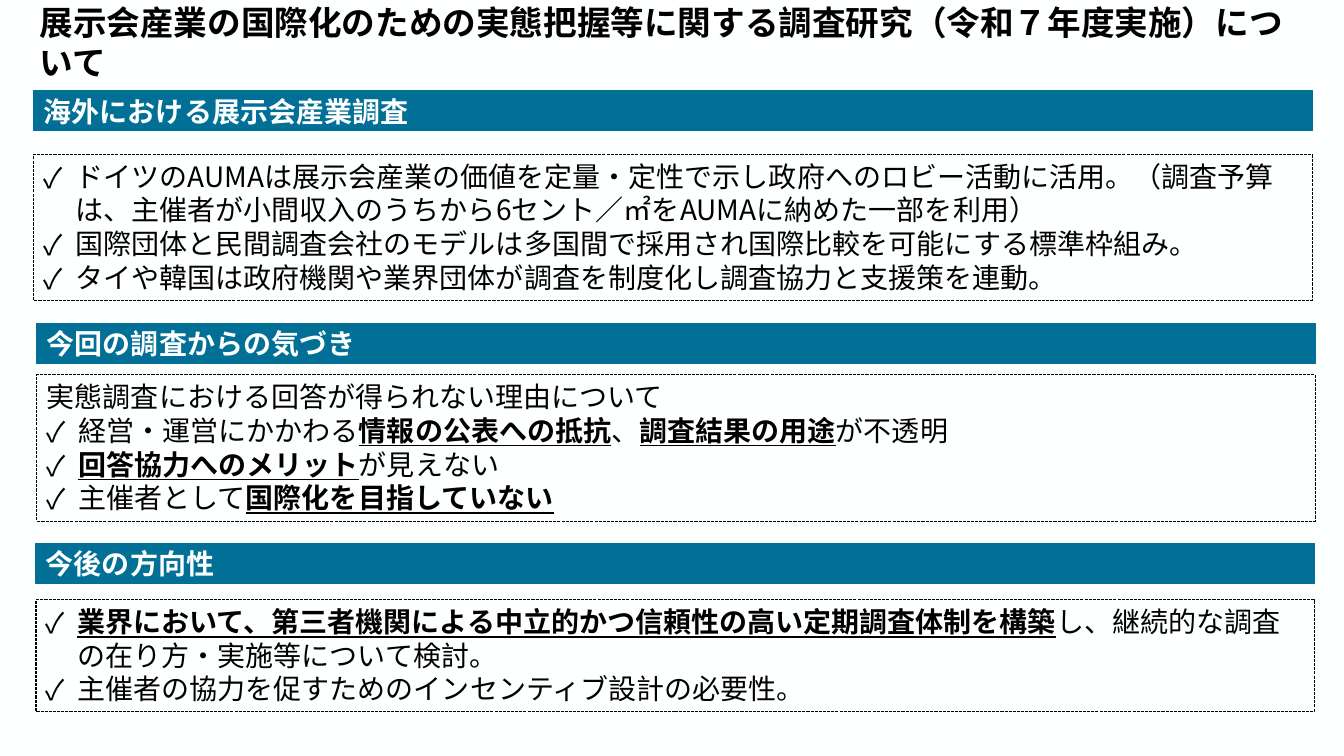
from lxml.etree import SubElement
from pptx import Presentation
from pptx.dml.color import RGBColor
from pptx.enum.dml import MSO_LINE
from pptx.enum.shapes import MSO_SHAPE
from pptx.enum.text import MSO_ANCHOR, MSO_AUTO_SIZE, PP_ALIGN
from pptx.oxml.ns import qn
from pptx.util import Pt

BLACK = RGBColor(0x00, 0x00, 0x00)
WHITE = RGBColor(0xFE, 0xFF, 0xFF)
TEAL = RGBColor(0x01, 0x6F, 0x96)
GOTHIC = "Noto Sans CJK JP"
LATIN = "Calibri"
WIDTH = 913
BAR_HEIGHT = 28.8
INDENT = 22.5

TITLE = "展示会産業の国際化のための実態把握等に関する調査研究（令和７年度実施）について"
OVERSEAS = [
    ["ドイツのAUMAは展示会産業の価値を定量・定性で示し政府へのロビー活動に活用。"
     "（調査予算は、主催者が小間収入のうちから6セント／㎡をAUMAに納めた一部を利用）"],
    ["国際団体と民間調査会社のモデルは多国間で採用され国際比較を可能にする標準枠組み。"],
    ["タイや韓国は政府機関や業界団体が調査を制度化し調査協力と支援策を連動。"],
]
FINDINGS_LEAD = "実態調査における回答が得られない理由について"
FINDINGS = [
    ["経営・運営にかかわる", ("情報の公表への抵抗",), "、", ("調査結果の用途",), "が不透明"],
    [("回答協力へのメリット",), "が見えない"],
    ["主催者として", ("国際化を目指していない",)],
]
DIRECTIONS = [
    [("業界において、第三者機関による中立的かつ信頼性の高い定期調査体制を構築",),
     "し、継続的な調査の在り方・実施等について検討。"],
    ["主催者の協力を促すためのインセンティブ設計の必要性。"],
]


def add_text(paragraph, text, size=20, font=GOTHIC, color=BLACK, bold=False, underline=False):
    """Append a formatted run to the paragraph."""
    run = paragraph.add_run()
    run.text = text
    run.font.size = Pt(size)
    run.font.bold = bold
    run.font.underline = underline
    run.font.color.rgb = color
    run.font.name = font
    east_asian = SubElement(run._r.get_or_add_rPr(), qn("a:ea"))
    east_asian.set("typeface", GOTHIC)


def add_check_mark(paragraph):
    """Give the paragraph a hanging check mark bullet."""
    properties = paragraph._p.get_or_add_pPr()
    properties.set("marL", str(Pt(INDENT)))
    properties.set("indent", str(-Pt(INDENT)))
    SubElement(properties, qn("a:buFont")).set("typeface", GOTHIC)
    SubElement(properties, qn("a:buChar")).set("char", "✓")


def add_box(slide, left, top, height, anchor):
    """Add a plain rectangle with left-aligned wrapping text."""
    shape = slide.shapes.add_shape(
        MSO_SHAPE.RECTANGLE, Pt(left), Pt(top), Pt(WIDTH), Pt(height))
    shape.shadow.inherit = False
    shape.line.width = Pt(0.75)
    shape.text_frame.word_wrap = True
    shape.text_frame.vertical_anchor = anchor
    shape.text_frame.paragraphs[0].alignment = PP_ALIGN.LEFT
    return shape


def add_title(slide, left, top, height):
    """Place the slide title in its placeholder."""
    title = slide.shapes.title
    title.left, title.top, title.width, title.height = Pt(left), Pt(top), Pt(WIDTH), Pt(height)
    frame = title.text_frame
    frame.word_wrap = True
    frame.auto_size = MSO_AUTO_SIZE.NONE
    frame.vertical_anchor = MSO_ANCHOR.MIDDLE
    frame.paragraphs[0].alignment = PP_ALIGN.LEFT
    add_text(frame.paragraphs[0], TITLE, size=24, bold=True)


def add_section(slide, left, top, heading, items, gap, height, lead=None, font=GOTHIC):
    """Add a heading bar and, below it, a dashed box of checked items."""
    bar = add_box(slide, left, top, BAR_HEIGHT, MSO_ANCHOR.MIDDLE)
    bar.fill.solid()
    bar.fill.fore_color.rgb = TEAL
    bar.line.color.rgb = TEAL
    add_text(bar.text_frame.paragraphs[0], heading, color=WHITE, bold=True)

    box = add_box(slide, left, top + BAR_HEIGHT + gap, height, MSO_ANCHOR.TOP)
    box.fill.background()
    box.line.color.rgb = BLACK
    box.line.dash_style = MSO_LINE.SQUARE_DOT
    frame = box.text_frame
    rows = ([[lead]] if lead else []) + items
    for index, parts in enumerate(rows):
        paragraph = frame.add_paragraph() if index else frame.paragraphs[0]
        paragraph.alignment = PP_ALIGN.LEFT
        if parts != [lead]:
            add_check_mark(paragraph)
        for part in parts:
            stressed = isinstance(part, tuple)
            add_text(paragraph, part[0] if stressed else part,
                     font=font, bold=stressed, underline=stressed)


def main():
    """Build and save the survey slide."""
    presentation = Presentation()
    presentation.slide_width, presentation.slide_height = Pt(960), Pt(540)
    slide = presentation.slides.add_slide(presentation.slide_layouts[5])
    slide.background.fill.solid()
    slide.background.fill.fore_color.rgb = WHITE
    add_title(slide, 21, 12.2, 36)
    add_section(slide, 24.2, 64.8, "海外における展示会産業調査", OVERSEAS, 16.6, 104.4)
    add_section(slide, 26.4, 231.1, "今回の調査からの気づき", FINDINGS, 7.9, 104.4,
                lead=FINDINGS_LEAD, font=LATIN)
    add_section(slide, 25.7, 388.1, "今後の方向性", DIRECTIONS, 11.5, 79.9, font=LATIN)
    presentation.save("out.pptx")


if __name__ == "__main__":
    main()
